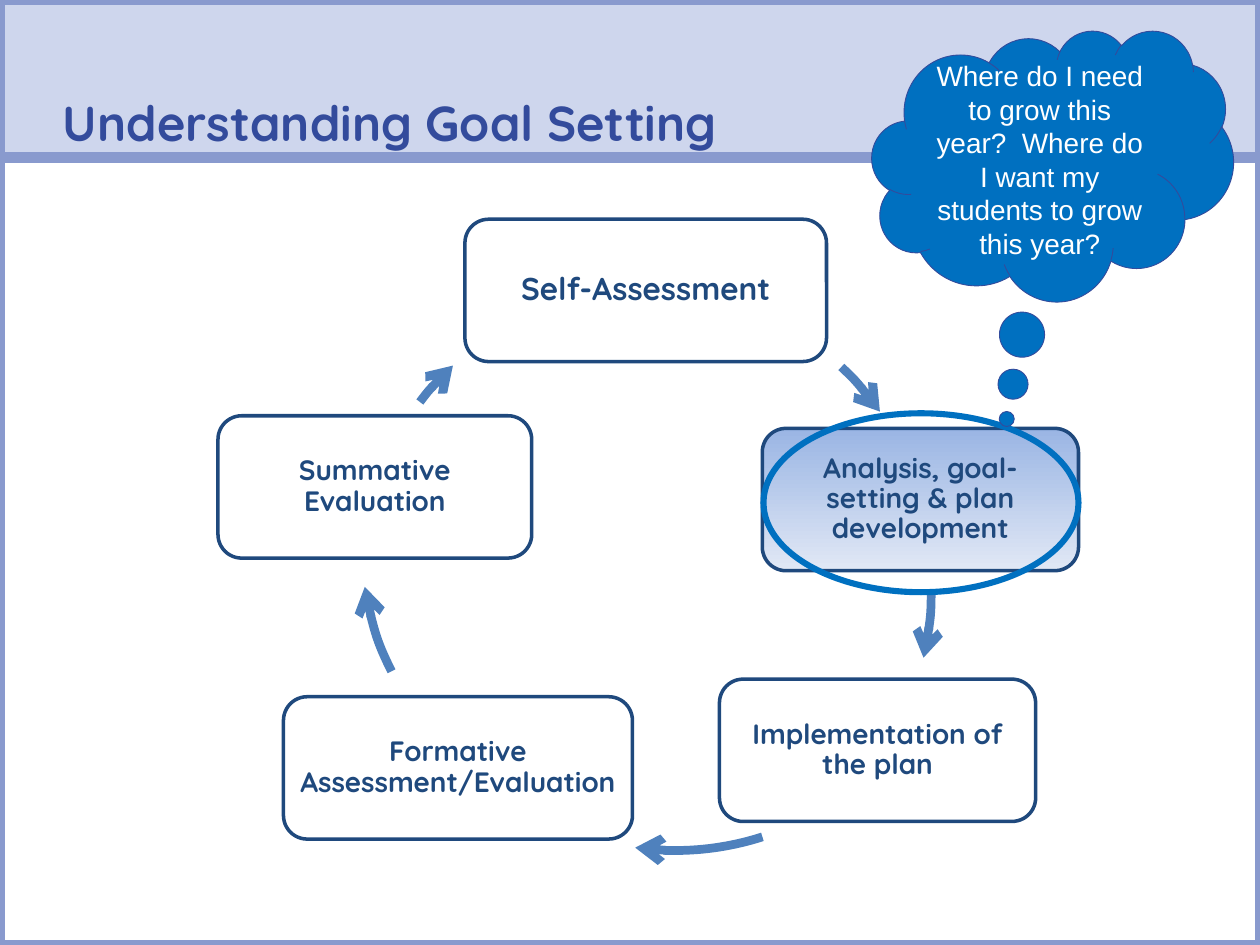
from lxml import etree
from pptx import Presentation
from pptx.dml.color import RGBColor
from pptx.enum import shapes, text
from pptx.oxml.ns import qn
from pptx.util import Inches, Pt

NAVY, INDIGO, BLUE = "1F497D", "334B9C", "0070C0"
PERIWINKLE, PALE, STEEL, WHITE = "899ACE", "CED6ED", "4F81BD", "FFFFFF"
KIND = shapes.MSO_SHAPE
RING_SIZE = 4.52

STEPS = [
    ("Self-Assessment", (3.69, 1.74, 2.87, 1.13), 18),
    ("Analysis, goal-setting & plan development", (6.05, 3.4, 2.51, 1.13), 16),
    ("Implementation of the plan", (5.71, 5.39, 2.51, 1.13), 16),
    ("Formative Assessment/Evaluation", (2.25, 5.53, 2.77, 1.13), 16),
    ("Summative Evaluation", (1.73, 3.3, 2.49, 1.13), 16),
]
CURRENT_STEP = 1
ARROWS = [
    (2.87, 2.3, 313.2, 325.1),
    (2.87, 2.44, 0, 13.3),
    (3.1, 2.23, 72.2, 98.1),
    (2.87, 2.06, 153.5, 171.4),
    (2.87, 2.3, 217.3, 227.2),
]


def color(value):
    """Turn a hex string into a colour."""
    return RGBColor.from_string(value)


def add_box(page, kind, box, line, width, fill=None):
    """Add an outlined preset shape, filled if a colour is given."""
    shape = page.shapes.add_shape(kind, *map(Inches, box))
    shape.shadow.inherit = False
    shape.line.color.rgb = color(line)
    shape.line.width = Pt(width)
    if fill:
        shape.fill.solid()
        shape.fill.fore_color.rgb = color(fill)
    else:
        shape.fill.background()
    return shape


def write(shape, words, size, ink, insets, font="Quicksand", bold=True,
          align=text.PP_ALIGN.CENTER, anchor=text.MSO_ANCHOR.MIDDLE, spacing=None):
    """Write one paragraph into a shape."""
    frame = shape.text_frame
    frame.word_wrap = True
    frame.vertical_anchor = anchor
    (frame.margin_left, frame.margin_top,
     frame.margin_right, frame.margin_bottom) = map(Inches, insets)
    para = frame.paragraphs[0]
    para.alignment = align
    para.line_spacing = spacing
    span = para.add_run()
    span.text = words
    span.font.name = font
    span.font.size = Pt(size)
    span.font.bold = bold
    span.font.color.rgb = color(ink)


def add_header(page, box):
    """Add the framed page body and the title band above it."""
    left, top, width, height = box
    band = 1.25
    add_box(page, KIND.RECTANGLE, (left, top + band, width, height - band), PERIWINKLE, 6)
    title = add_box(page, KIND.RECTANGLE, (left, top, width, band), PERIWINKLE, 6, PALE)
    write(title, "Understanding Goal Setting", 28, INDIGO, (0.5, 0, 0.5, 0.05),
          align=text.PP_ALIGN.LEFT, anchor=text.MSO_ANCHOR.BOTTOM, spacing=Pt(26))


def add_step(page, words, box, size, current):
    """Add one step of the cycle, shaded if it is the current one."""
    step = add_box(page, KIND.ROUNDED_RECTANGLE, box, NAVY, 2)
    if current:
        step.fill.gradient()
        step.fill.gradient_angle = 270
        for stop, shade, position in zip(step.fill.gradient_stops, ("9AB5E4", "E1E8F5"), (0, 1)):
            stop.color.rgb = color(shade)
            stop.position = position
    write(step, words, size, NAVY, (0.07,) * 4, spacing=0.9)


def add_arrow(page, left, top, start, end):
    """Add a clockwise arc with an arrowhead, its angles in degrees."""
    arc = add_box(page, KIND.ARC, (left, top, RING_SIZE, RING_SIZE), STEEL, 5)
    for index, angle in enumerate((start, end)):
        arc.adjustments[index] = angle * 0.6
    etree.SubElement(arc.line._get_or_add_ln(), qn("a:tailEnd"), type="arrow")


def add_cycle(page):
    """Add the steps and the arrows between them."""
    for index, (words, box, size) in enumerate(STEPS):
        add_step(page, words, box, size, index == CURRENT_STEP)
        add_arrow(page, *ARROWS[index])


def add_thought(page, box):
    """Add the thought cloud with its trail of bubbles."""
    cloud = add_box(page, KIND.CLOUD_CALLOUT, box, INDIGO, 0.5, BLUE)
    cloud.adjustments[0] = -0.127
    cloud.adjustments[1] = 0.935
    write(cloud, "Where do I need to grow this year?  Where do I want my students to grow this year?",
          16, WHITE, (0.1, 0.05, 0.1, 0.05), font="Arial", bold=False)


def main():
    """Build the slide and save it."""
    deck = Presentation()
    deck.slide_width, deck.slide_height = Inches(10), Inches(7.5)
    page = deck.slides.add_slide(deck.slide_layouts[6])
    add_header(page, (0, 0, 10, 7.5))
    add_cycle(page)
    add_box(page, KIND.OVAL, (6.06, 3.28, 2.5, 1.42), BLUE, 3.5)
    add_thought(page, (6.92, 0.24, 2.87, 2.15))
    deck.save("out.pptx")


if __name__ == "__main__":
    main()
